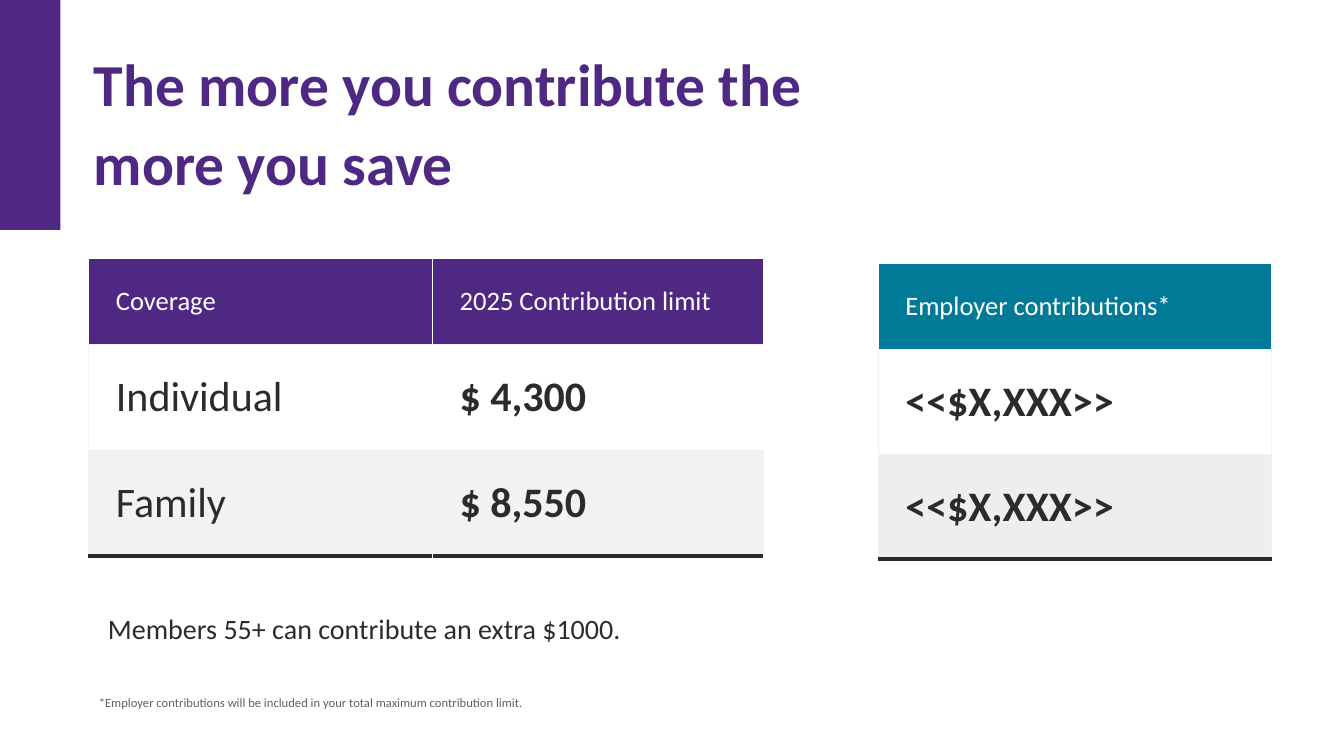
from lxml import etree
from pptx import Presentation
from pptx.dml.color import RGBColor
from pptx.enum.shapes import MSO_SHAPE
from pptx.enum.text import MSO_ANCHOR, PP_ALIGN
from pptx.oxml.ns import qn
from pptx.util import Inches, Pt

RECT = MSO_SHAPE.RECTANGLE
TOP, MIDDLE = MSO_ANCHOR.TOP, MSO_ANCHOR.MIDDLE
LEFT = PP_ALIGN.LEFT
FONT = "Calibri"
COLORS = {
    "purple": "4F2883",
    "teal": "007A96",
    "white": "FFFFFF",
    "pale": "F2F2F2",
    "mist": "EDEEEE",
    "ink": "2A2C2C",
    "gray": "5E6262",
}


def color(name):
    return RGBColor.from_string(COLORS[name])


def write(frame, text, size=20, tint="ink", bold=False, line=None, after=0,
          pad=(0, 0, 0, 0)):
    frame.word_wrap = True
    frame.margin_left, frame.margin_top, frame.margin_right, frame.margin_bottom = map(Inches, pad)
    para = frame.paragraphs[0]
    para.alignment = LEFT
    para.space_before = Pt(0)
    para.space_after = Pt(after)
    if line:
        para.line_spacing = line
    run = para.add_run()
    run.text = text
    run.font.name = FONT
    run.font.size = Pt(size)
    run.font.bold = bold
    run.font.color.rgb = color(tint)


def edge(cell, side, tint, width=1):
    props = cell._tc.get_or_add_tcPr()
    line = etree.SubElement(props, qn(f"a:ln{side}"), w=str(Pt(width)))
    fill = etree.SubElement(line, qn("a:solidFill"))
    etree.SubElement(fill, qn("a:srgbClr"), val=COLORS[tint])


class Page:
    def __init__(self, deck):
        self.wide, self.high = deck.slide_width, deck.slide_height
        self.slide = deck.slides.add_slide(deck.slide_layouts[5])

    def across(self, share):
        return round(self.wide * share / 100)

    def down(self, share):
        return round(self.high * share / 100)

    def box(self, x, y, w, h):
        return self.across(x), self.down(y), self.across(w), self.down(h)

    def bar(self, area, tint):
        shape = self.slide.shapes.add_shape(RECT, *self.box(*area))
        shape.shadow.inherit = False
        shape.fill.solid()
        shape.fill.fore_color.rgb = color(tint)
        shape.line.fill.background()

    def title(self, area, text, **style):
        shape = self.slide.shapes.title
        shape.left, shape.top, shape.width, shape.height = self.box(*area)
        shape.text_frame.vertical_anchor = TOP
        write(shape.text_frame, text, **style)

    def text(self, area, text, **style):
        shape = self.slide.shapes.add_textbox(*self.box(*area))
        write(shape.text_frame, text, **style)

    def table(self, x, y, cols, rows, bold):
        highs = [11.33] + [13.87] * (len(rows) - 1)
        area = self.box(x, y, sum(cols), sum(highs))
        table = self.slide.shapes.add_table(len(rows), len(cols), *area).table
        table.first_row = table.horz_banding = False
        for col, share in zip(table.columns, cols):
            col.width = self.across(share)
        for r, (texts, fill, sides) in enumerate(rows):
            table.rows[r].height = self.down(highs[r])
            head, last = r == 0, r == len(rows) - 1
            for c, text in enumerate(texts):
                cell = table.cell(r, c)
                edge(cell, "L", sides[c])
                edge(cell, "R", sides[c + 1])
                edge(cell, "T", "white" if head else "pale")
                edge(cell, "B", "ink" if last else "pale", 3 if last else 1)
                cell.fill.solid()
                cell.fill.fore_color.rgb = color(fill)
                cell.vertical_anchor = MIDDLE if head else TOP
                cell.margin_left = cell.margin_right = Inches(0.27)
                cell.margin_top = cell.margin_bottom = Inches(0.27)
                write(cell.text_frame, text, size=19 if head else 30,
                      tint="white" if head else "ink",
                      bold=not head and c == bold, pad=(0.27,) * 4)


def main():
    deck = Presentation()
    deck.slide_width, deck.slide_height = Inches(13.33), Inches(7.5)
    page = Page(deck)
    page.bar((0, 0, 4.5, 30.4), "purple")
    page.title((6.98, 5.33, 54, 20.4), "The more you contribute the more you save",
               size=42.5, tint="purple", bold=True, line=1.1)
    page.table(6.6, 34.13, (25.58, 24.61), [
        (("Coverage", "2025 Contribution limit"), "purple", ("white", "white", "white")),
        (("Individual", "$ 4,300"), "white", ("pale", "white", "white")),
        (("Family", "$ 8,550"), "pale", ("pale", "pale", "pale")),
    ], bold=1)
    page.text((6.38, 90.93, 87.17, 3.87),
              "*Employer contributions will be included in your total maximum contribution limit.",
              size=9, tint="gray", pad=(0.13, 0.07, 0.13, 0.07))
    page.table(65.34, 34.8, (29.26,), [
        (("Employer contributions*",), "teal", ("white", "white")),
        (("<<$X,XXX>>",), "white", ("mist", "pale")),
        (("<<$X,XXX>>",), "mist", ("mist", "pale")),
    ], bold=0)
    page.text((8.03, 79.33, 44.79, 6.27), "Members 55+ can contribute an extra $1000.",
              line=1.2, after=40, pad=(0, 0.05, 0.1, 0.05))
    deck.save("out.pptx")


if __name__ == "__main__":
    main()
